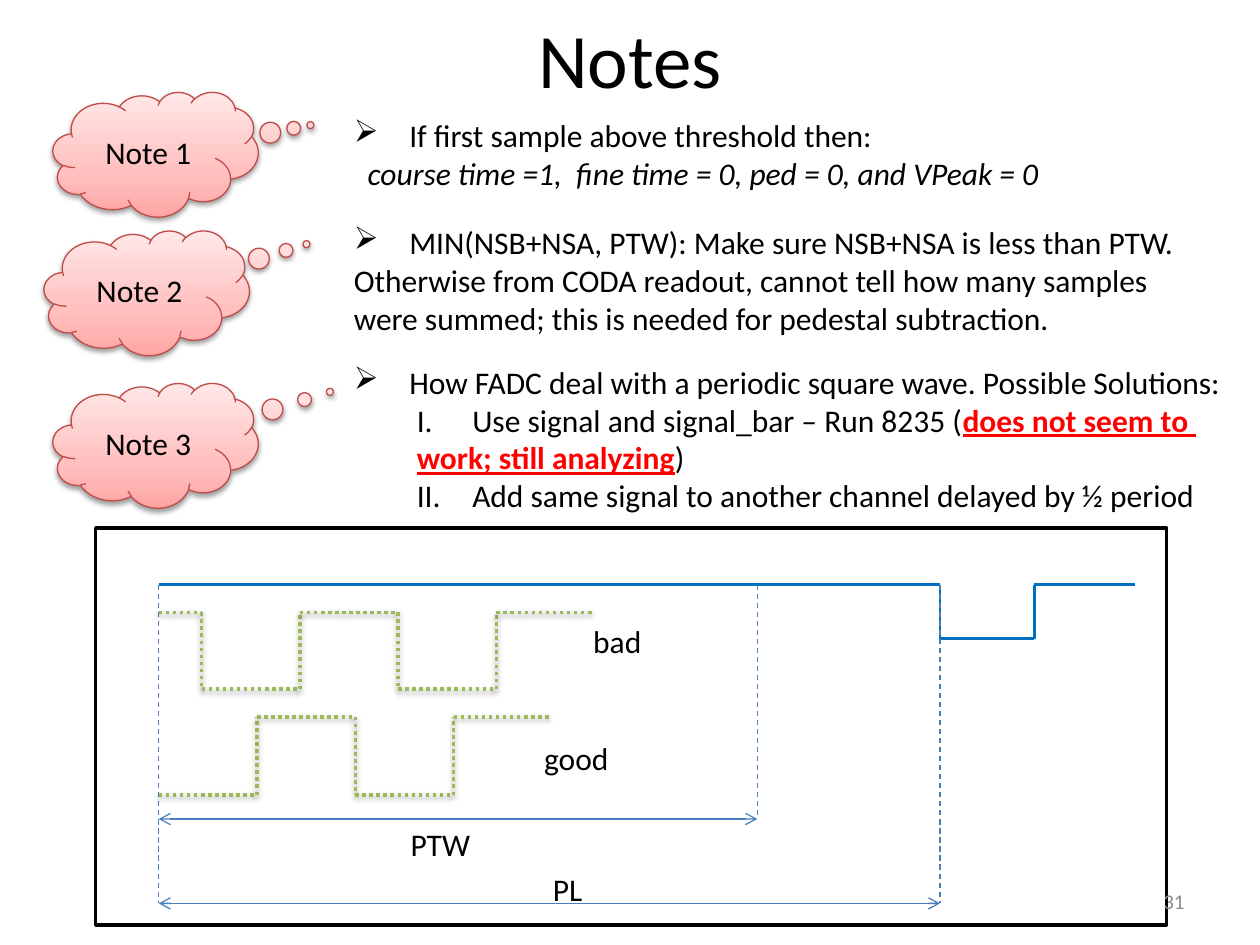
from dataclasses import dataclass
from itertools import pairwise

from lxml import etree
from pptx import Presentation
from pptx.dml.color import RGBColor
from pptx.enum.dml import MSO_LINE
from pptx.enum.shapes import MSO_CONNECTOR, MSO_SHAPE
from pptx.enum.text import MSO_ANCHOR, MSO_AUTO_SIZE, PP_ALIGN
from pptx.oxml.ns import qn
from pptx.util import Inches, Pt

LINE = MSO_CONNECTOR.STRAIGHT
CLOUD = MSO_SHAPE.CLOUD_CALLOUT
RECT = MSO_SHAPE.RECTANGLE
DASH, DOTS = MSO_LINE.DASH, MSO_LINE.ROUND_DOT
LEFT, CENTER, RIGHT = PP_ALIGN.LEFT, PP_ALIGN.CENTER, PP_ALIGN.RIGHT
MIDDLE, TOP = MSO_ANCHOR.MIDDLE, MSO_ANCHOR.TOP
FIT, FIXED = MSO_AUTO_SIZE.SHAPE_TO_FIT_TEXT, MSO_AUTO_SIZE.NONE


@dataclass(frozen=True)
class Theme:
    """Fonts, sizes and colours of the slide."""
    font: str = "Calibri"
    head: int = 44
    text: int = 18
    small: int = 12
    ink: str = "000000"
    alert: str = "FF0000"
    gray: str = "8C8C8C"
    pulse: str = "0070C0"
    guide: str = "4B7EBC"
    wave: str = "9BBB59"
    edge: str = "BF4C48"
    blush: tuple = ((0, "FFA6A5"), (35, "FFC0BF"), (100, "FFE7E7"))


@dataclass(frozen=True)
class Item:
    """One paragraph: its runs, list mark and indents."""
    runs: tuple
    mark: str = ""
    start: int = 0
    level: int = 0
    left: float = 0
    hang: float = 0


THEME = Theme()


def add(parent, tag, **attrs):
    """Append an XML child with the given attributes."""
    node = etree.SubElement(parent, qn(tag))
    for key, value in attrs.items():
        node.set(key, str(value))
    return node


def shade(effects):
    """Put a soft shadow into an effect list."""
    cast = add(effects, "a:outerShdw", blurRad=Pt(3.1), dist=Pt(1.6),
               dir=5400000, rotWithShape=0)
    add(add(cast, "a:srgbClr", val=THEME.ink), "a:alpha", val=38000)


def write(para, text, size=THEME.text, color=THEME.ink, style=""):
    """Add one run to a paragraph."""
    run = para.add_run()
    run.text = text
    font = run.font
    font.name, font.size = THEME.font, Pt(size)
    font.color.rgb = RGBColor.from_string(color)
    if "b" in style:
        font.bold = True
    if "i" in style:
        font.italic = True
    if "u" in style:
        font.underline = True


def label(slide, box, text, size=THEME.text, color=THEME.ink, align=LEFT,
          anchor=TOP, fit=FIT):
    """Place a one-line text box."""
    shape = slide.shapes.add_textbox(*map(Inches, box))
    frame = shape.text_frame
    frame.word_wrap = fit == FIXED
    frame.auto_size, frame.vertical_anchor = fit, anchor
    frame.paragraphs[0].alignment = align
    write(frame.paragraphs[0], text, size, color)


def link(slide, start, end, color, width, dash=None, arrows=False,
         shadow=False):
    """Draw a straight line between two points."""
    line = slide.shapes.add_connector(LINE, *map(Inches, (*start, *end)))
    line.line.color.rgb = RGBColor.from_string(color)
    line.line.width = Pt(width)
    if dash:
        line.line.dash_style = dash
    props = line._element.spPr
    if arrows:
        for tag in ("a:headEnd", "a:tailEnd"):
            add(props.find(qn("a:ln")), tag, type="arrow")
    effects = add(props, "a:effectLst")
    if shadow:
        shade(effects)


def trace(slide, xs, levels, **look):
    """Draw a square wave through alternating levels."""
    points = []
    for i, (a, b) in enumerate(pairwise(xs)):
        y = levels[i % 2]
        points += [(a, y), (b, y)]
    for start, end in pairwise(points):
        link(slide, start, end, **look)


def title(slide, box, text):
    """Fill and place the title."""
    shape = slide.shapes.title
    shape.left, shape.top, shape.width, shape.height = map(Inches, box)
    frame = shape.text_frame
    frame.vertical_anchor = MIDDLE
    frame.paragraphs[0].alignment = CENTER
    write(frame.paragraphs[0], text, THEME.head)


def cloud(slide, box, tip, text):
    """Draw a thought cloud with its name."""
    shape = slide.shapes.add_shape(CLOUD, *map(Inches, box))
    for i, value in enumerate(tip):
        shape.adjustments[i] = value
    props = shape._element.spPr
    grad = add(props, "a:gradFill", rotWithShape=1)
    stops = add(grad, "a:gsLst")
    for pos, color in THEME.blush:
        add(add(stops, "a:gs", pos=pos * 1000), "a:srgbClr", val=color)
    add(grad, "a:lin", ang=16200000, scaled=0)
    shape.line.color.rgb = RGBColor.from_string(THEME.edge)
    shape.line.width = Pt(0.75)
    shape.shadow.inherit = False
    shade(props.find(qn("a:effectLst")))
    frame = shape.text_frame
    frame.vertical_anchor = MIDDLE
    frame.paragraphs[0].alignment = CENTER
    write(frame.paragraphs[0], text)


def notes(slide, box, items):
    """Place a note's paragraphs."""
    frame = slide.shapes.add_textbox(*map(Inches, box)).text_frame
    frame.word_wrap, frame.auto_size = False, FIT
    for i, item in enumerate(items):
        para = frame.add_paragraph() if i else frame.paragraphs[0]
        para.level = item.level
        props = para._p.get_or_add_pPr()
        props.set("marL", str(Inches(item.left)))
        props.set("indent", str(Inches(-item.hang)))
        if item.mark:
            add(props, "a:buChar", char=item.mark)
        elif item.start:
            add(props, "a:buAutoNum", type="romanUcPeriod",
                startAt=item.start)
        for run in item.runs:
            write(para, run[0], **(run[1] if len(run) > 1 else {}))


def point(text):
    """Make a top-level arrow bullet."""
    return Item(((text,),), mark="➢", left=0.44, hang=0.44)


def chart(slide, box):
    """Draw the framed timing diagram."""
    x, y, w, h = box
    shape = slide.shapes.add_shape(RECT, *map(Inches, box))
    shape.fill.background()
    shape.line.color.rgb = RGBColor.from_string(THEME.ink)
    shape.line.width = Pt(2)
    shape.shadow.inherit = False

    left, ptw, pl = x + 0.5, x + 5.25, x + 6.7
    top, mid, base = y + 0.45, y + 2.31, y + 2.98
    trace(slide, (left, pl, x + 7.45, x + 8.25), (top, top + 0.43),
          color=THEME.pulse, width=1.5)
    for at, end in ((pl, base), (left, base), (ptw, mid)):
        link(slide, (at, top), (at, end), THEME.guide, 0.75, DASH)
    for end, at in ((pl, base), (ptw, mid)):
        link(slide, (left, at), (end, at), THEME.guide, 0.75, arrows=True)

    step = 0.78
    look = dict(color=THEME.wave, width=2, dash=DOTS, shadow=True)
    bad = [left] + [left + 0.34 + step * i for i in range(5)]
    good = [left + step * i for i in range(5)]
    trace(slide, bad, (y + 0.67, y + 1.28), **look)
    trace(slide, good, (y + 2.12, y + 1.5), **look)

    for dx, dy, width, height, text in (
            (3.53, 2.67, 0.44, 0.36, "PL"), (2.4, 2.31, 0.68, 0.36, "PTW"),
            (3.85, 0.7, 0.59, 0.4, "bad"), (3.46, 1.63, 0.72, 0.4, "good")):
        label(slide, (x + dx, y + dy, width, height), text)


def main():
    """Build and save the slide."""
    deck = Presentation()
    deck.slide_width, deck.slide_height = Inches(10), Inches(7.5)
    slide = deck.slides.add_slide(deck.slide_layouts[5])
    title(slide, (0.5, 0, 9, 0.92), "Notes")
    alert = dict(color=THEME.alert, style="bu")
    first = (point("If first sample above threshold then:"),
             Item((("course time =1,  fine time = 0, ped = 0, and VPeak = 0",
                    dict(style="i")),), left=0.11))
    second = (
        point("MIN(NSB+NSA, PTW): Make sure NSB+NSA is less than PTW."),
        Item((("Otherwise from CODA readout, cannot tell how many samples",),)),
        Item((("were summed; this is needed for pedestal subtraction.",),)))
    third = (
        point("How FADC deal with a periodic square wave. Possible Solutions:"),
        Item((("Use signal and signal_bar – Run 8235 (",),
              ("does not seem to ", alert)),
             start=1, level=1, left=0.94, hang=0.44),
        Item((("work; still analyzing", alert), (")",)), level=1, left=0.5),
        Item((("Add same signal to another channel delayed by ½ period",),),
             start=2, level=1, left=0.94, hang=0.44))
    rows = ((0.42, 0.73, (0.754, -0.234), 0.87, 5.9, 0.71, first),
            (0.35, 1.83, (0.778, -0.391), 1.72, 6.77, 1.01, second),
            (0.42, 3.04, (0.849, -0.43), 2.83, 7.16, 1.31, third))
    for i, (x, y, tip, top, width, height, items) in enumerate(rows, 1):
        cloud(slide, (x, y, 1.63, 0.99), tip, f"Note {i}")
        notes(slide, (2.71, top, width, height), items)
    chart(slide, (0.76, 4.19, 8.5, 3.15))
    label(slide, (7.17, 6.95, 2.33, 0.4), "31", THEME.small, THEME.gray,
          RIGHT, MIDDLE, FIXED)
    deck.save("out.pptx")


if __name__ == "__main__":
    main()
